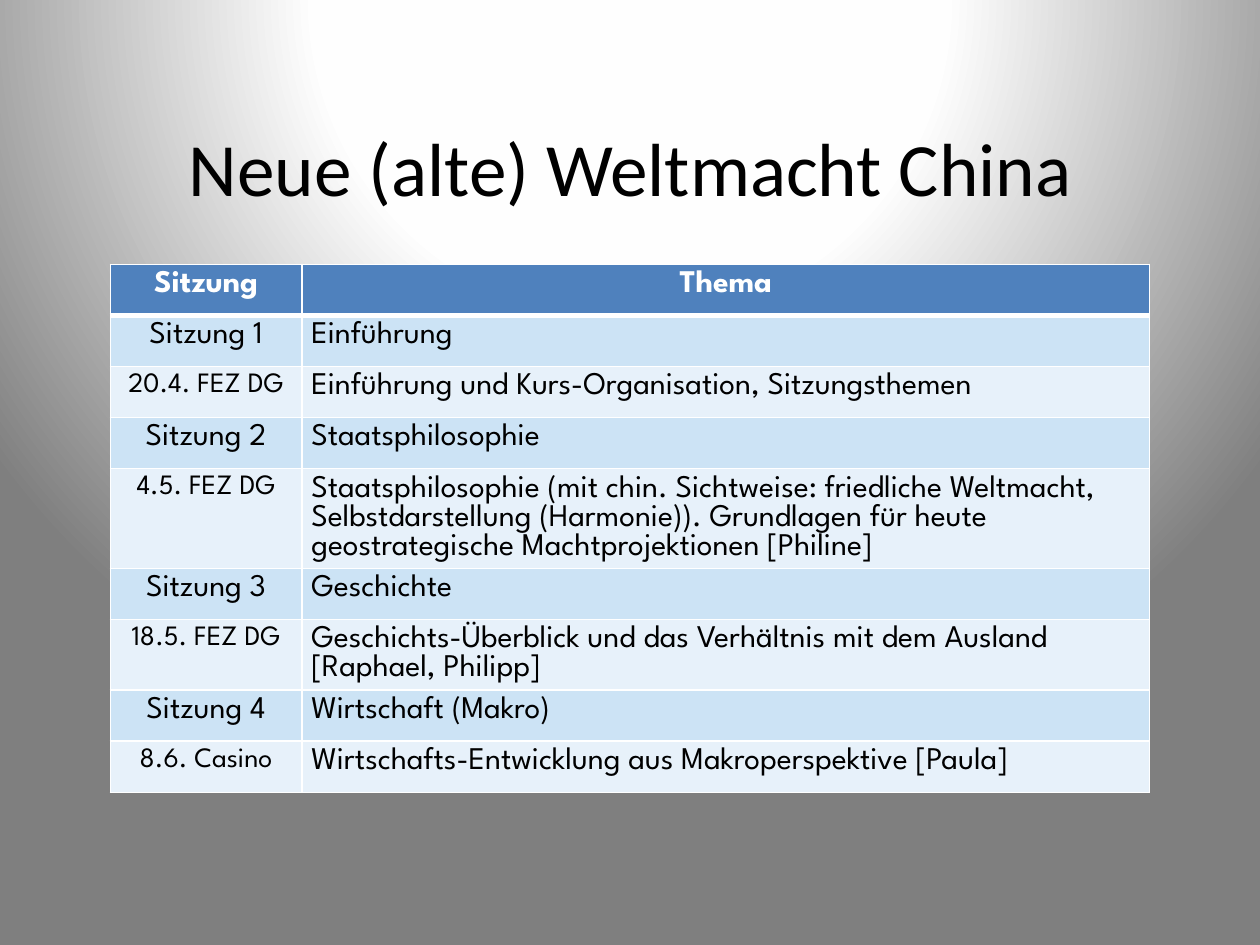
from lxml import etree
from pptx import Presentation
from pptx import util as u
from pptx.dml.color import RGBColor
from pptx.enum import text
from pptx.oxml import ns, parse_xml

COLORS = {"white": "FFFFFF", "black": "000000", "header": "4F81BD",
          "session": "CCE3F5", "detail": "E7F1FA"}
BACKDROP = [(0, "FFFFFF"), (40, "FEFEFE"), (100, "7F7F7F")]
CENTER, LEFT = text.PP_ALIGN.CENTER, text.PP_ALIGN.LEFT

SESSIONS = [
    ("Sitzung 1", "Einführung", "20.4. FEZ DG",
     "Einführung und Kurs-Organisation, Sitzungsthemen"),
    ("Sitzung 2", "Staatsphilosophie", "4.5. FEZ DG",
     "Staatsphilosophie (mit chin. Sichtweise: friedliche Weltmacht, "
     "Selbstdarstellung (Harmonie)). Grundlagen für heute "
     "geostrategische Machtprojektionen [Philine]"),
    ("Sitzung 3", "Geschichte", "18.5. FEZ DG",
     "Geschichts-Überblick und das Verhältnis mit dem Ausland [Raphael, Philipp]"),
    ("Sitzung 4", "Wirtschaft (Makro)", "8.6. Casino",
     "Wirtschafts-Entwicklung aus Makroperspektive [Paula]"),
]


class Deck:
    def __init__(self, width, height):
        self.prs = Presentation()
        self.prs.slide_width, self.prs.slide_height = u.Pt(width), u.Pt(height)
        self.s = self.prs.slides.add_slide(self.prs.slide_layouts[6])

    def background(self, stops):
        """Fill the slide with a circular gradient centred above its top edge."""
        gs = "".join(f'<a:gs pos="{pos * 1000}"><a:srgbClr val="{color}"/></a:gs>'
                     for pos, color in stops)
        bg = parse_xml(
            f'<p:bg {ns.nsdecls("p", "a")}><p:bgPr><a:gradFill rotWithShape="1">'
            f'<a:gsLst>{gs}</a:gsLst><a:path path="circle">'
            '<a:fillToRect l="50000" t="-80000" r="50000" b="180000"/></a:path>'
            '</a:gradFill><a:effectLst/></p:bgPr></p:bg>')
        self.s.element.cSld.insert(0, bg)

    def add_text(self, tf, words, align, color, **font):
        p = tf.paragraphs[0]
        p.alignment = align
        r = p.add_run()
        r.text = words
        for name, value in font.items():
            setattr(r.font, name, value)
        r.font.color.rgb = RGBColor.from_string(COLORS[color])

    def title(self, words, x, y, w, h):
        tf = self.s.shapes.add_textbox(*map(u.Pt, (x, y, w, h))).text_frame
        tf.word_wrap = True
        tf.vertical_anchor = text.MSO_ANCHOR.MIDDLE
        self.add_text(tf, words, CENTER, "black", name="Calibri", size=u.Pt(43))

    def borders(self, cell, **widths):
        for side, width in widths.items():
            ln = etree.SubElement(cell._tc.get_or_add_tcPr(), ns.qn(f"a:ln{side}"),
                                  w=str(u.Pt(width)))
            fill = etree.SubElement(ln, ns.qn("a:solidFill"))
            etree.SubElement(fill, ns.qn("a:srgbClr"), val=COLORS["white"])

    def cell(self, cell, words, align, fill, color, top, bottom, **font):
        insets = {"margin_left": 5.4, "margin_right": 5.4,
                  "margin_top": 3.6, "margin_bottom": 3.6}
        for name, value in insets.items():
            setattr(cell, name, u.Pt(value))
        self.borders(cell, L=1, R=1, T=top, B=bottom)
        cell.fill.solid()
        cell.fill.fore_color.rgb = RGBColor.from_string(COLORS[fill])
        self.add_text(cell.text_frame, words, align, color,
                      name="League Spartan", **font)

    def table(self, rows, x, y, col_widths, row_height):
        """Draw a header row, then alternating session and detail rows."""
        table = self.s.shapes.add_table(
            len(rows), len(col_widths),
            *map(u.Pt, (x, y, sum(col_widths), row_height * len(rows)))).table
        for col, width in zip(table.columns, col_widths):
            col.width = u.Pt(width)
        for i, row in enumerate(rows):
            table.rows[i].height = u.Pt(row_height)
            header, detail = i == 0, i > 0 and i % 2 == 0
            fill = "header" if header else "detail" if detail else "session"
            for j, words in enumerate(row):
                self.cell(table.cell(i, j), words,
                          CENTER if header or j == 0 else LEFT,
                          fill, "white" if header else "black",
                          top=3 if i == 1 else 1, bottom=3 if header else 1,
                          size=u.Pt(16 if detail and j == 0 else 18), bold=header)


def main():
    deck = Deck(720, 540)
    deck.background(BACKDROP)
    rows = [("Sitzung", "Thema")]
    for number, topic, date, content in SESSIONS:
        rows += [(number, topic), (date, content)]
    deck.table(rows, 63, 151, (109.5, 484.5), 29.2)
    deck.title("Neue (alte) Weltmacht China", 63, 41, 594, 108)
    deck.prs.save("out.pptx")


if __name__ == "__main__":
    main()
